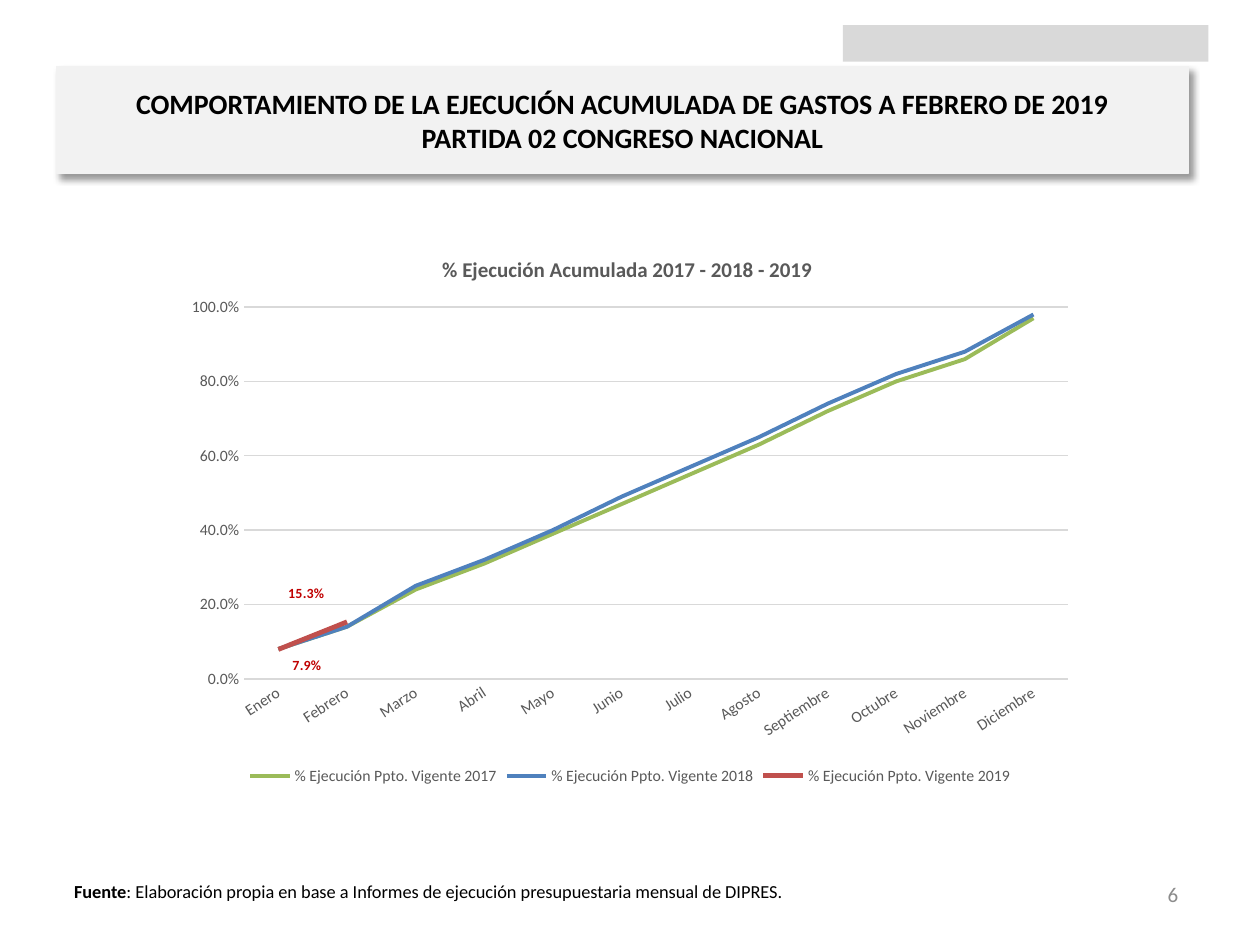
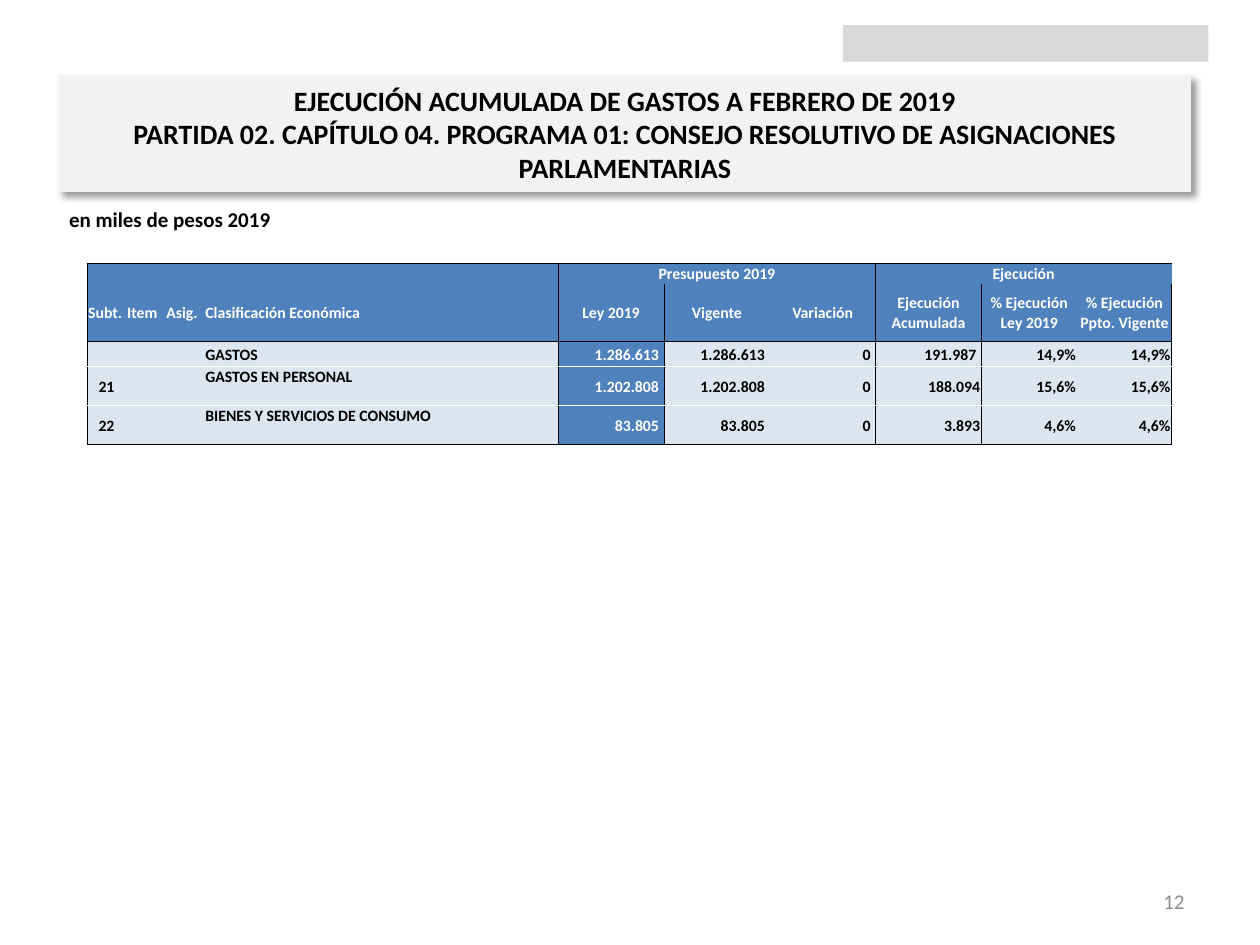
from copy import deepcopy

from lxml import etree
from pptx import Presentation
from pptx.chart.data import CategoryChartData
from pptx.dml.color import RGBColor
from pptx.enum.chart import XL_CHART_TYPE, XL_LABEL_POSITION, XL_LEGEND_POSITION, XL_TICK_MARK
from pptx.enum.shapes import MSO_SHAPE
from pptx.enum.text import MSO_ANCHOR, MSO_AUTO_SIZE, PP_ALIGN
from pptx.oxml import parse_xml
from pptx.oxml.ns import nsdecls, qn
from pptx.util import Inches, Pt

BLACK = RGBColor(0x00, 0x00, 0x00)
WHITE = RGBColor(0xFF, 0xFF, 0xFF)
BAND = RGBColor(0xF2, 0xF2, 0xF2)
NUMBER_GRAY = RGBColor(0x8C, 0x8C, 0x8C)
CHART_GRAY = RGBColor(0x59, 0x59, 0x59)
GRID = RGBColor(0xD9, 0xD9, 0xD9)
BLUE = RGBColor(0x4F, 0x81, 0xBD)
PALE_BLUE = RGBColor(0xDC, 0xE6, 0xF1)
GREEN = RGBColor(0x9B, 0xBB, 0x59)
RED = RGBColor(0xC0, 0x50, 0x4D)
LABEL_RED = RGBColor(0xC0, 0x00, 0x00)

FONT = "Calibri"
NO_TABLE_STYLE = "{2D5ABB26-0587-4C30-8999-92F81FD0307C}"
TITLE_SHADOW = (
    f'<a:effectLst {nsdecls("a")}><a:outerShdw blurRad="50800" dist="38100" dir="2700000">'
    '<a:srgbClr val="000000"><a:alpha val="40000"/></a:srgbClr></a:outerShdw></a:effectLst>'
)
NO_LEADER_LINES = (
    f'<c:extLst {nsdecls("c")}><c:ext uri="{{CE6537A1-D6FC-4f65-9D91-7224C49458BB}}" '
    'xmlns:c15="http://schemas.microsoft.com/office/drawing/2012/chart">'
    '<c15:showLeaderLines val="0"/></c:ext></c:extLst>'
)

MONTHS = ["Enero", "Febrero", "Marzo", "Abril", "Mayo", "Junio", "Julio", "Agosto",
          "Septiembre", "Octubre", "Noviembre", "Diciembre"]
EXECUTION = [
    (2017, GREEN, 2.25, [0.08, 0.14, 0.24, 0.31, 0.39, 0.47, 0.55, 0.63, 0.72, 0.8, 0.86, 0.97]),
    (2018, BLUE, 2.25, [0.08, 0.14, 0.25, 0.32, 0.4, 0.49, 0.57, 0.65, 0.74, 0.82, 0.88, 0.98]),
    (2019, RED, 2.75, [0.079, 0.153]),
]
LABEL_OFFSETS = [(0.01, 0.03), (-0.07, -0.05)]

COLUMN_WIDTHS = [0.31] * 3 + [2.81] + [0.84] * 4 + [0.76, 0.75]
ROW_HEIGHTS = [0.16, 0.46, 0.2, 0.31, 0.31]
HEADER_ROWS = 2
NAME_COLUMN = 3
LAW_COLUMN = 4
GROUPS = [(0, 3), (4, 6), (7, 9)]
BUDGET = [
    ["", "", "", "", "Presupuesto 2019", "", "", "Ejecución", "", ""],
    ["Subt.", "Item", "Asig.", "Clasificación Económica", "Ley 2019", "Vigente", "Variación",
     "Ejecución Acumulada", "% Ejecución Ley 2019", "% Ejecución Ppto. Vigente"],
    ["", "", "", "GASTOS", "1.286.613", "1.286.613", "0", "191.987", "14,9%", "14,9%"],
    ["21", "", "", "GASTOS EN PERSONAL", "1.202.808", "1.202.808", "0", "188.094", "15,6%", "15,6%"],
    ["22", "", "", "BIENES Y SERVICIOS DE CONSUMO", "83.805", "83.805", "0", "3.893", "4,6%", "4,6%"],
]


def set_font(font, size, color=BLACK, bold=False):
    font.name = FONT
    font.size = Pt(size)
    font.bold = bold
    font.color.rgb = color


def add_text(para, text, align=None, **style):
    """Append text to a paragraph; a newline becomes a line break of the same size."""
    if align is not None:
        para.alignment = align
    for number, line in enumerate(text.split("\n")):
        if number:
            para.add_line_break()
        span = para.add_run()
        span.text = line
        set_font(span.font, **style)
    for line_break in para._p.findall(qn("a:br")):
        line_break.append(deepcopy(span._r.rPr))


def set_layout(parent, index, **values):
    """Give a chart part a manual layout as child number index."""
    for old in parent.findall(qn("c:layout")):
        parent.remove(old)
    layout = etree.Element(qn("c:layout"))
    manual = etree.SubElement(layout, qn("c:manualLayout"))
    for name, value in values.items():
        etree.SubElement(manual, qn(f"c:{name}")).set("val", str(value))
    parent.insert(index, layout)


def hide_leader_lines(series):
    labels = series._element.find(qn("c:dLbls"))
    for flag in labels.findall(qn("c:showLeaderLines")):
        flag.set("val", "0")
    labels.append(parse_xml(NO_LEADER_LINES))


def add_border(cell, side, color):
    cell._tc.get_or_add_tcPr().append(parse_xml(
        f'<a:ln{side} {nsdecls("a")} w="6350"><a:solidFill>'
        f'<a:srgbClr val="{color}"/></a:solidFill></a:ln{side}>'))


class ReportDeck:
    def __init__(self):
        self.deck = Presentation()
        self.deck.slide_width = Inches(10)
        self.deck.slide_height = Inches(7.5)
        self.page = None

    def add_page(self, title, title_top, title_height, title_left):
        self.page = self.deck.slides.add_slide(self.deck.slide_layouts[5])
        self.add_header_block()
        band = self.page.shapes.title
        band.left, band.top = Inches(title_left), Inches(title_top)
        band.width, band.height = Inches(8.98), Inches(title_height)
        band.fill.solid()
        band.fill.fore_color.rgb = BAND
        band.line.color.rgb = BAND
        band.line.width = Pt(0.75)
        band._element.spPr.append(parse_xml(TITLE_SHADOW))
        frame = band.text_frame
        frame.word_wrap = True
        frame.auto_size = MSO_AUTO_SIZE.NONE
        frame.vertical_anchor = MSO_ANCHOR.MIDDLE
        frame.margin_left = frame.margin_right = Inches(0.11)
        frame.margin_top = frame.margin_bottom = Inches(0.05)
        add_text(frame.paragraphs[0], title, align=PP_ALIGN.CENTER, size=16, bold=True)

    def add_header_block(self):
        block = self.page.shapes.add_shape(
            MSO_SHAPE.RECTANGLE, Inches(6.69), Inches(0.2), Inches(2.9), Inches(0.29))
        block.shadow.inherit = False
        block.fill.solid()
        block.fill.fore_color.rgb = GRID
        block.line.fill.background()

    def add_box(self, left, top, width, height, spans, align=None, anchor=MSO_ANCHOR.TOP):
        box = self.page.shapes.add_textbox(Inches(left), Inches(top), Inches(width), Inches(height))
        frame = box.text_frame
        frame.word_wrap = True
        frame.vertical_anchor = anchor
        for text, style in spans:
            add_text(frame.paragraphs[0], text, align=align, **style)

    def add_page_number(self, number, left, top):
        self.add_box(left, top, 2.33, 0.4, [(number, dict(size=12, color=NUMBER_GRAY))],
                     align=PP_ALIGN.RIGHT, anchor=MSO_ANCHOR.MIDDLE)

    def add_execution_chart(self):
        data = CategoryChartData(number_format="0.0%")
        data.categories = MONTHS
        for year, _, _, values in EXECUTION:
            data.add_series(f"% Ejecución Ppto. Vigente {year}", values)
        chart = self.page.shapes.add_chart(
            XL_CHART_TYPE.LINE, Inches(1.38), Inches(1.84), Inches(7.24), Inches(4.43), data).chart
        set_font(chart.font, 10)
        chart.has_title = True
        add_text(chart.chart_title.text_frame.paragraphs[0], "% Ejecución Acumulada 2017 - 2018 - 2019",
                 size=12, color=CHART_GRAY, bold=True)
        set_layout(chart.chart_title._element, 1, xMode="edge", yMode="edge", x=0.29, y=0.035)
        set_layout(chart._chartSpace.chart.plotArea, 0, layoutTarget="inner", xMode="edge",
                   yMode="edge", x=0.077, y=0.135, w=0.903, h=0.666)
        chart.has_legend = True
        chart.legend.position = XL_LEGEND_POSITION.BOTTOM
        chart.legend.include_in_layout = False
        set_font(chart.legend.font, 9, CHART_GRAY)
        self.format_axes(chart.category_axis, chart.value_axis)
        chart.plots[0].vary_by_categories = False
        for series, (_, color, width, _) in zip(chart.series, EXECUTION):
            series.smooth = False
            series.format.line.color.rgb = color
            series.format.line.width = Pt(width)
        for point, (x, y) in enumerate(LABEL_OFFSETS):
            label = series.points[point].data_label
            set_font(label.font, 8, LABEL_RED, bold=True)
            label.position = XL_LABEL_POSITION.RIGHT
            set_layout(label._dLbl, 1, x=x, y=y)
        hide_leader_lines(series)

    def format_axes(self, months, share):
        for axis in (months, share):
            axis.major_tick_mark = axis.minor_tick_mark = XL_TICK_MARK.NONE
            set_font(axis.tick_labels.font, 9, CHART_GRAY)
        months._element.txPr.bodyPr.set("rot", "-1980000")
        months.format.line.color.rgb = GRID
        months.format.line.width = Pt(1)
        share.format.line.fill.background()
        share.minimum_scale, share.maximum_scale, share.major_unit = 0, 1, 0.2
        share.tick_labels.number_format = "0.0%"
        share.tick_labels.number_format_is_linked = False
        share.major_gridlines.format.line.color.rgb = GRID
        share.major_gridlines.format.line.width = Pt(0.75)

    def add_budget_table(self):
        frame = self.page.shapes.add_table(
            len(BUDGET), len(COLUMN_WIDTHS), Inches(0.69), Inches(2.09),
            Inches(sum(COLUMN_WIDTHS)), Inches(sum(ROW_HEIGHTS)))
        table = frame.table
        table.first_row = table.horz_banding = False
        table._tbl.tblPr.find(qn("a:tableStyleId")).text = NO_TABLE_STYLE
        for column, width in zip(table.columns, COLUMN_WIDTHS):
            column.width = Inches(width)
        for row, height in zip(table.rows, ROW_HEIGHTS):
            row.height = Inches(height)
        for first, last in GROUPS[1:]:
            table.cell(0, first).merge(table.cell(0, last))
        for row, texts in enumerate(BUDGET):
            for column, text in enumerate(texts):
                self.format_cell(table.cell(row, column), row, column, text)

    def format_cell(self, cell, row, column, text):
        header = row < HEADER_ROWS
        number = not header and column >= LAW_COLUMN
        padded = number and (column < 7 or (row, column) == (HEADER_ROWS, 7))
        cell.margin_left = cell.margin_top = Inches(0.01)
        cell.margin_right = Inches(0.04 if padded else 0.01)
        cell.margin_bottom = 0
        cell.vertical_anchor = MSO_ANCHOR.MIDDLE
        if row == 0:
            cell.vertical_anchor = MSO_ANCHOR.BOTTOM
        elif row > HEADER_ROWS and column == NAME_COLUMN:
            cell.vertical_anchor = MSO_ANCHOR.TOP

        if column in [first for first, _ in GROUPS]:
            add_border(cell, "L", BLACK)
        if column in [last for _, last in GROUPS]:
            add_border(cell, "R", BLACK)
        if row != 1:
            add_border(cell, "T", BLACK if row in (0, HEADER_ROWS) else WHITE)
        if row > 0:
            add_border(cell, "B", BLACK if row in (1, len(BUDGET) - 1) else WHITE)
        filled = header or column == LAW_COLUMN
        cell.fill.solid()
        cell.fill.fore_color.rgb = BLUE if filled else PALE_BLUE

        para = cell.text_frame.paragraphs[0]
        if not text:
            etree.SubElement(para._p, qn("a:endParaRPr")).set("sz", "900")
            return
        if number:
            align = PP_ALIGN.RIGHT
        elif column == NAME_COLUMN or (header and column < NAME_COLUMN):
            align = PP_ALIGN.LEFT
        else:
            align = PP_ALIGN.CENTER
        add_text(para, text, align=align, size=9, color=WHITE if filled else BLACK, bold=True)


def main():
    report = ReportDeck()

    report.add_page("COMPORTAMIENTO DE LA EJECUCIÓN ACUMULADA DE GASTOS A FEBRERO DE 2019\n"
                    "PARTIDA 02 CONGRESO NACIONAL",
                    title_top=0.53, title_height=0.85, title_left=0.45)
    report.add_page_number("6", 7.12, 6.9)
    report.add_box(0.49, 6.94, 9, 0.4, [
        ("Fuente", dict(size=10.5, bold=True)),
        (": Elaboración propia en base a Informes de ejecución presupuestaria mensual de DIPRES.",
         dict(size=10.5))])
    report.add_execution_chart()

    report.add_page("EJECUCIÓN ACUMULADA DE GASTOS A FEBRERO DE 2019\n"
                    "PARTIDA 02. CAPÍTULO 04. PROGRAMA 01: CONSEJO RESOLUTIVO DE ASIGNACIONES "
                    "PARLAMENTARIAS",
                    title_top=0.6, title_height=0.92, title_left=0.47)
    report.add_page_number("12", 7.17, 6.95)
    report.add_box(0.45, 1.59, 9, 0.43, [("en miles de pesos 2019", dict(size=12, bold=True))])
    report.add_budget_table()

    report.deck.save("out.pptx")


if __name__ == "__main__":
    main()
